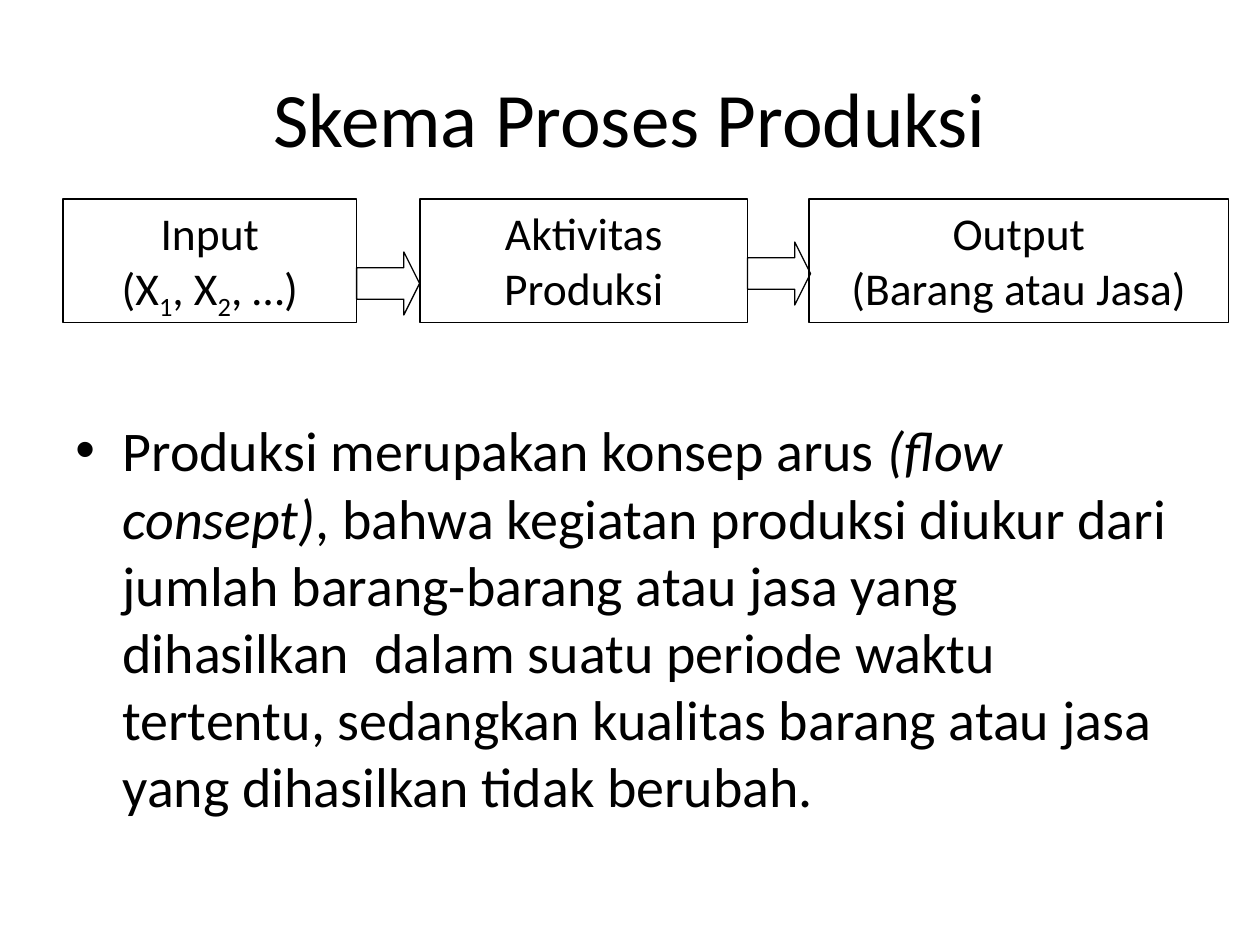
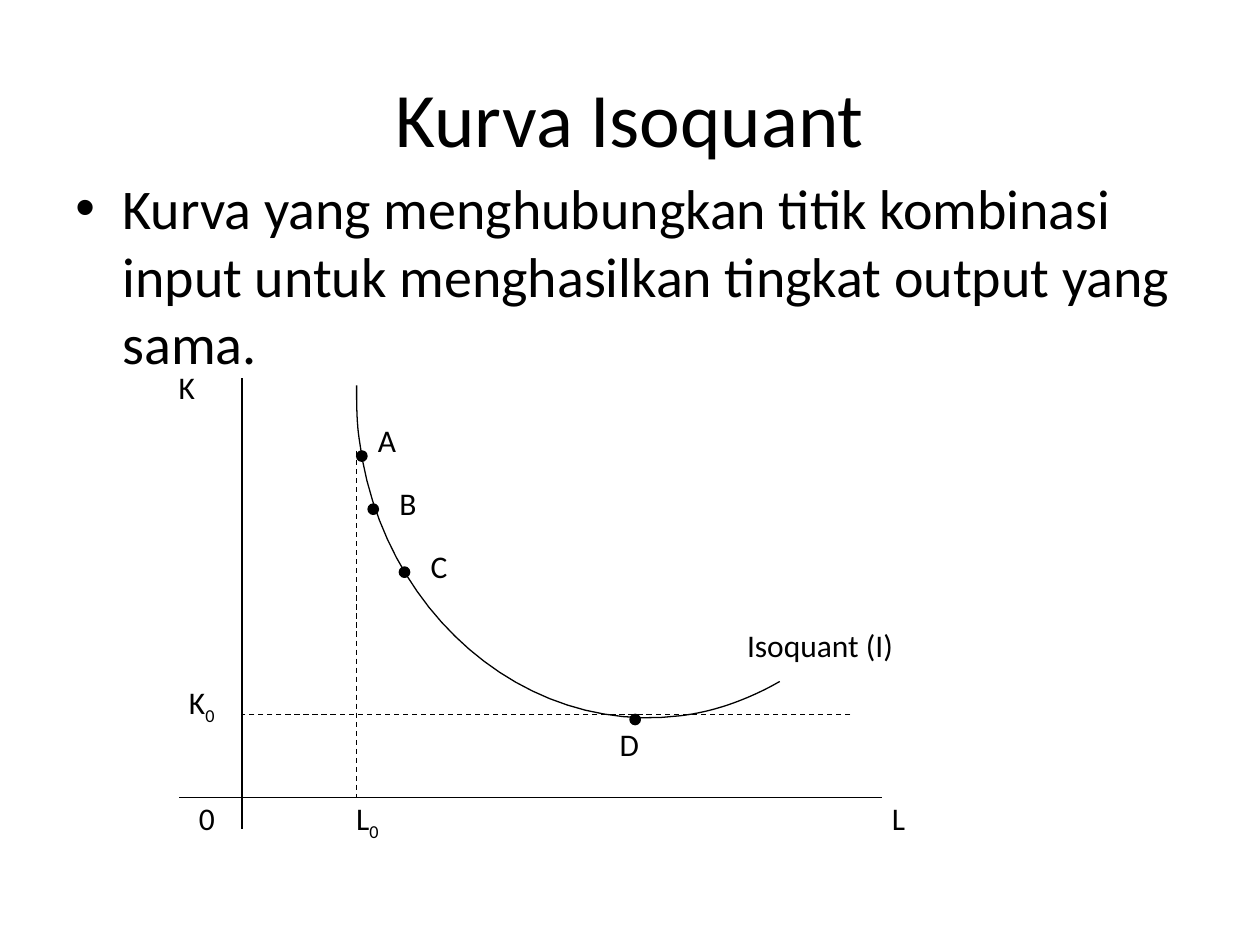
from lxml import etree
from pptx import Presentation
from pptx.dml.color import RGBColor
from pptx.enum.dml import MSO_LINE
from pptx.enum.shapes import MSO_CONNECTOR, MSO_SHAPE
from pptx.enum.text import MSO_ANCHOR, MSO_AUTO_SIZE, PP_ALIGN
from pptx.oxml.ns import qn
from pptx.util import Cm, Pt

RECT, ARROW = MSO_SHAPE.RECTANGLE, MSO_SHAPE.RIGHT_ARROW
DOT = MSO_SHAPE.FLOWCHART_CONNECTOR
STRAIGHT, DASH = MSO_CONNECTOR.STRAIGHT, MSO_LINE.DASH
TOP, MIDDLE = MSO_ANCHOR.TOP, MSO_ANCHOR.MIDDLE
LEFT, CENTER = PP_ALIGN.LEFT, PP_ALIGN.CENTER
GROW = MSO_AUTO_SIZE.SHAPE_TO_FIT_TEXT

FONT, INK, PAPER = "Calibri", "000000", "FFFFFF"
MARGIN, CONTENT_W = 1.27, 22.86
LINE_W = 0.75

PRODUCTION = {
    "title": "Skema Proses Produksi",
    "body": [("Produksi merupakan konsep arus ", ""), ("(flow consept)", "i"),
             (", bahwa kegiatan produksi diukur dari jumlah barang-barang atau jasa yang "
              "dihasilkan  dalam suatu periode waktu tertentu, sedangkan kualitas barang "
              "atau jasa yang dihasilkan tidak berubah.", "")],
    "body_box": (8.26, 8.99),
}
STAGES = [
    (1.27, 5.92, [[("Input", "")],
                  [("(X", ""), ("1", "sub"), (", X", ""), ("2", "sub"), (", …)", "")]]),
    (8.47, 6.6, [[("Aktivitas", "")], [("Produksi", "")]]),
    (16.31, 8.46, [[("Output", "")], [("(Barang atau Jasa)", "")]]),
]
STAGE_TOP, STAGE_H = 4.01, 2.49
ARROW_SIZE = 1.27
ARROW_TOPS = [5.08, 4.88]

ISOQUANT = {
    "title": "Kurva Isoquant",
    "body": [("Kurva yang menghubungkan titik kombinasi input untuk menghasilkan "
              "tingkat output yang sama.", "")],
    "body_box": (3.38, 13.64),
}
AXIS_X, AXIS_Y = 4.88, 16.08
K0_Y, L0_X = 14.4, 7.19
AXES = [(AXIS_X, 7.62, AXIS_X, 16.71), (3.61, AXIS_Y, 17.78, AXIS_Y)]
GUIDES = [(17.14, K0_Y, AXIS_X, K0_Y), (L0_X, 9.09, L0_X, AXIS_Y)]
CURVE = [
    [(15.72, 13.74), (15.09, 14.1), (14.4, 14.35), (13.72, 14.43)],
    [(13.72, 14.43), (10.57, 14.83), (7.67, 12.32), (7.24, 8.84)],
    [(7.24, 8.84), (7.19, 8.48), (7.19, 8.13), (7.19, 7.77)],
]
CURVE_STEPS = 24
DOT_SIZE = 0.21
POINTS = [(7.19, 9.09), (7.42, 10.16), (8.05, 11.43), (12.7, 14.4)]
LABEL_H, AXIS_LABEL_Y = 1.02, 15.98
LABELS = [
    (3.35, 7.29, 0.94, [("K", "")]),
    (17.73, AXIS_LABEL_Y, 0.86, [("L", "")]),
    (3.76, AXIS_LABEL_Y, 0.86, [("0", "")]),
    (6.93, AXIS_LABEL_Y, 1.09, [("L", ""), ("0", "sub")]),
    (3.56, 13.64, 1.17, [("K", ""), ("0", "sub")]),
    (12.24, 14.5, 0.97, [("D", "")]),
    (7.37, 8.36, 0.94, [("A", "")]),
    (7.8, 9.63, 0.94, [("B", "")]),
    (8.43, 10.9, 0.97, [("C", "")]),
    (14.81, 12.5, 3.73, [("Isoquant (I)", "")]),
]


def rgb(color):
    """Turn a hex string into a colour."""
    return RGBColor.from_string(color)


def write(tf, paragraphs, size, align=LEFT, anchor=TOP):
    """Fill a text frame with paragraphs of (text, style) runs."""
    tf.vertical_anchor = anchor
    for i, runs in enumerate(paragraphs):
        p = tf.add_paragraph() if i else tf.paragraphs[0]
        p.alignment = align
        for text, style in runs:
            r = p.add_run()
            r.text = text
            r.font.name, r.font.size = FONT, Pt(size)
            r.font.color.rgb = rgb(INK)
            if style == "i":
                r.font.italic = True
            elif style == "sub":
                r.font._element.set("baseline", "-25000")


def outline(sp, fill=None):
    """Give a shape a thin line, an optional fill and no shadow."""
    sp.shadow.inherit = False
    sp.line.color.rgb, sp.line.width = rgb(INK), Pt(LINE_W)
    if fill:
        sp.fill.solid()
        sp.fill.fore_color.rgb = rgb(fill)
    else:
        sp.fill.background()


def add_shape(s, kind, x, y, w, h, fill=None):
    """Add an outlined preset shape."""
    sp = s.shapes.add_shape(kind, Cm(x), Cm(y), Cm(w), Cm(h))
    outline(sp, fill)
    return sp


def add_line(s, x1, y1, x2, y2, dash=None):
    """Add a thin straight line."""
    line = s.shapes.add_connector(STRAIGHT, Cm(x1), Cm(y1), Cm(x2), Cm(y2))
    line.line.color.rgb, line.line.width = rgb(INK), Pt(LINE_W)
    if dash:
        line.line.dash_style = dash
    etree.SubElement(line._element.spPr, qn("a:effectLst"))


def add_bullet(p):
    """Hang a round bullet in front of a paragraph."""
    p.space_before = Pt(6.4)
    pPr = p._p.get_or_add_pPr()
    pPr.set("marL", str(Cm(0.95)))
    pPr.set("indent", str(-Cm(0.95)))
    etree.SubElement(pPr, qn("a:buFont")).set("typeface", "Arial")
    etree.SubElement(pPr, qn("a:buChar")).set("char", "•")


def add_slide(prs, content):
    """Add a slide with its title and bulleted body."""
    s = prs.slides.add_slide(prs.slide_layouts[5])
    s.background.fill.solid()
    s.background.fill.fore_color.rgb = rgb(PAPER)
    title = s.shapes.title
    title.left, title.top = Cm(MARGIN), Cm(0.76)
    title.width, title.height = Cm(CONTENT_W), Cm(3.18)
    write(title.text_frame, [[(content["title"], "")]], 44, CENTER, MIDDLE)
    top, height = content["body_box"]
    body = s.shapes.add_textbox(Cm(MARGIN), Cm(top), Cm(CONTENT_W), Cm(height))
    tf = body.text_frame
    tf.word_wrap = True
    write(tf, [content["body"]], 32)
    add_bullet(tf.paragraphs[0])
    return s


def bezier(a, b, c, d, t):
    """Return the point at t on a cubic curve."""
    u = 1 - t
    return tuple(Cm(u**3 * p + 3 * u * u * t * q + 3 * u * t * t * r + t**3 * v)
                 for p, q, r, v in zip(a, b, c, d))


def draw_process(s):
    """Draw the stages of production and the arrows between them."""
    for x, w, lines in STAGES:
        sp = add_shape(s, RECT, x, STAGE_TOP, w, STAGE_H)
        write(sp.text_frame, lines, 26, CENTER)
        sp.text_frame.auto_size = GROW
    for (x, w, _), y in zip(STAGES, ARROW_TOPS):
        sp = add_shape(s, ARROW, x + w, y, ARROW_SIZE, ARROW_SIZE)
        sp.adjustments[0], sp.adjustments[1] = 0.5, 0.25


def draw_isoquant(s):
    """Draw the axes, the curve, its points and the labels."""
    for ends in AXES:
        add_line(s, *ends)
    curve = [bezier(*part, i / CURVE_STEPS)
             for part in CURVE for i in range(CURVE_STEPS + 1)]
    builder = s.shapes.build_freeform(*curve[0])
    builder.add_line_segments(curve[1:], close=False)
    outline(builder.convert_to_shape())
    for ends in GUIDES:
        add_line(s, *ends, dash=DASH)
    for x, y, w, runs in LABELS:
        tf = s.shapes.add_textbox(Cm(x), Cm(y), Cm(w), Cm(LABEL_H)).text_frame
        tf.word_wrap, tf.auto_size = False, GROW
        write(tf, [runs], 18)
    for x, y in POINTS:
        add_shape(s, DOT, x, y, DOT_SIZE, DOT_SIZE, INK)


def main():
    """Build the two slides and save them."""
    prs = Presentation()
    prs.slide_width, prs.slide_height = Cm(25.4), Cm(19.05)
    draw_process(add_slide(prs, PRODUCTION))
    draw_isoquant(add_slide(prs, ISOQUANT))
    prs.save("out.pptx")


if __name__ == "__main__":
    main()
